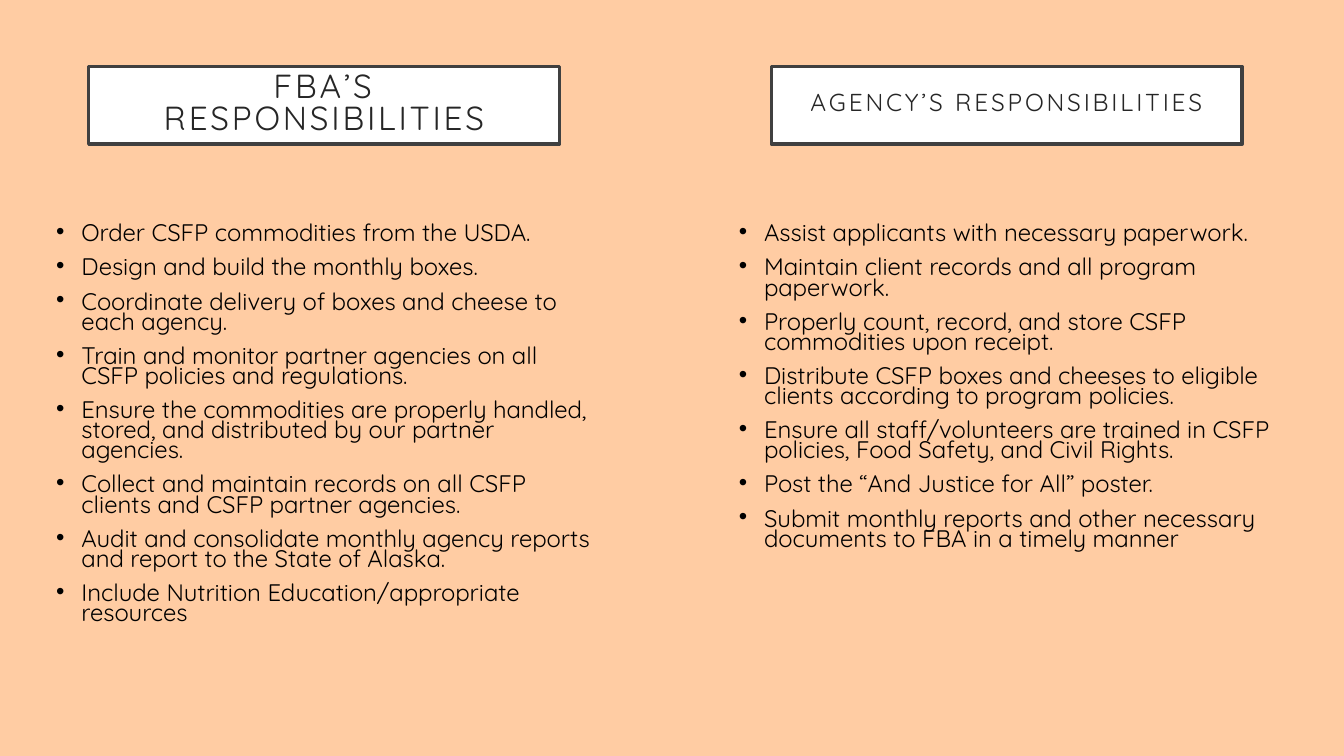
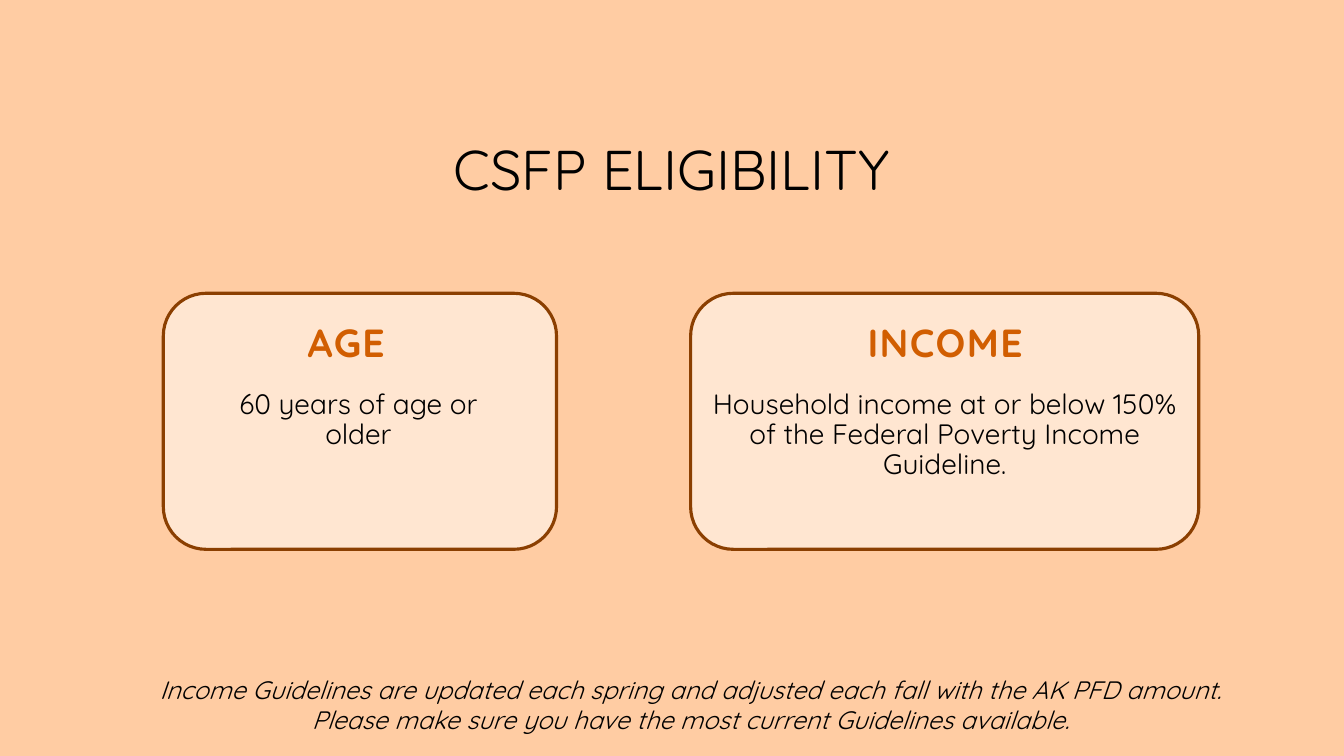
from lxml.etree import SubElement
from pptx import Presentation
from pptx.dml.color import RGBColor
from pptx.enum.shapes import MSO_SHAPE
from pptx.enum.text import MSO_ANCHOR, PP_ALIGN
from pptx.oxml.ns import qn
from pptx.util import Inches, Pt

FONT = "Quicksand"
PEACH, CREAM, WHITE = "FFCCA3", "FFE6D1", "FFFFFF"
BLACK, CHARCOAL, GRAY = "000000", "262626", "404040"
ORANGE, BROWN = "D15E01", "8B3F01"

RESPONSIBILITIES = [
    (0.46, "FBA’S RESPONSIBILITIES", 23.8, 0.8, [
        "Order CSFP commodities from the USDA.",
        "Design and build the monthly boxes.",
        "Coordinate delivery of boxes and cheese to each agency.",
        "Train and monitor partner agencies on all CSFP policies and regulations.",
        "Ensure the commodities are properly handled, stored, and distributed by our partner agencies.",
        "Collect and maintain records on all CSFP clients and CSFP partner agencies.",
        "Audit and consolidate monthly agency reports and report to the State of Alaska.",
        "Include Nutrition Education/appropriate resources",
    ]),
    (7.23, "AGENCY’S RESPONSIBILITIES", 17.5, 0.7, [
        "Assist applicants with necessary paperwork.",
        "Maintain client records and all program paperwork.",
        "Properly count, record, and store CSFP commodities upon receipt.",
        "Distribute CSFP boxes and cheeses to eligible clients according to program policies.",
        "Ensure all staff/volunteers are trained in CSFP policies, Food Safety, and Civil Rights.",
        "Post the “And Justice for All” poster.",
        "Submit monthly reports and other necessary documents to FBA in a timely manner",
    ]),
]


def rgb(color):
    return RGBColor.from_string(color)


class Deck:
    """Holds the shared style and the slide being built."""

    def __init__(self):
        self.presentation = Presentation()
        self.presentation.slide_width = Inches(13.33)
        self.presentation.slide_height = Inches(7.5)
        self.slide = None

    def add_slide(self):
        self.slide = self.presentation.slides.add_slide(self.presentation.slide_layouts[6])
        fill = self.slide.background.fill
        fill.solid()
        fill.fore_color.rgb = rgb(PEACH)

    def set_text(self, shape, lines, size, color=BLACK, align=PP_ALIGN.CENTER,
                 anchor=MSO_ANCHOR.TOP, line_spacing=0.9, letter_spacing=0,
                 indent=0, bullet=False, bold=False, italic=False):
        """Fill a shape with one paragraph per line, in the shared font."""
        frame = shape.text_frame
        frame.word_wrap = True
        frame.vertical_anchor = anchor
        frame.text = "\n".join(lines)
        for index, paragraph in enumerate(frame.paragraphs):
            properties = paragraph._p.get_or_add_pPr()
            if indent:
                properties.set("marL", str(Inches(indent)))
            if bullet:
                properties.set("indent", str(-Inches(indent)))
                SubElement(properties, qn("a:buFont"), typeface="Arial")
                SubElement(properties, qn("a:buChar"), char="•")
            paragraph.alignment = align
            paragraph.line_spacing = line_spacing
            paragraph.space_before = Pt(10 if index else 0)
            for run in paragraph.runs:
                font = run.font
                font.name, font.size = FONT, Pt(size)
                font.bold, font.italic = bold, italic
                font.color.rgb = rgb(color)
                if letter_spacing:
                    run._r.get_or_add_rPr().set("spc", str(letter_spacing * 100))

    def text(self, left, top, width, height, lines, size, **style):
        box = self.slide.shapes.add_textbox(
            Inches(left), Inches(top), Inches(width), Inches(height))
        self.set_text(box, lines, size, **style)

    def panel(self, kind, left, top, width, height, fill, line, line_width):
        shape = self.slide.shapes.add_shape(
            kind, Inches(left), Inches(top), Inches(width), Inches(height))
        shape.shadow.inherit = False
        shape.fill.solid()
        shape.fill.fore_color.rgb = rgb(fill)
        shape.line.color.rgb = rgb(line)
        shape.line.width = Pt(line_width)
        return shape

    def label(self, left, text, size, line_spacing):
        """Add a framed column heading."""
        shape = self.panel(MSO_SHAPE.RECTANGLE, left, 0.66, 4.67, 0.77, WHITE, GRAY, 2.5)
        frame = shape.text_frame
        frame.margin_left = frame.margin_right = Inches(0.2)
        frame.margin_top = frame.margin_bottom = Inches(0.2)
        self.set_text(shape, [text], size, color=CHARCOAL, anchor=MSO_ANCHOR.MIDDLE,
                      line_spacing=line_spacing, letter_spacing=2)

    def bullets(self, left, lines):
        self.text(left, 2.19, 5.5, 5, lines, 17.1, align=PP_ALIGN.LEFT,
                  line_spacing=0.7, indent=0.25, bullet=True)

    def card(self, left, width):
        self.panel(MSO_SHAPE.ROUNDED_RECTANGLE, left, 2.91, width, 2.54, CREAM, BROWN, 2.25)

    def card_heading(self, left, text):
        self.text(left, 2.91, 4.67, 0.77, [text], 28, color=ORANGE,
                  anchor=MSO_ANCHOR.BOTTOM, letter_spacing=1, bold=True)

    def card_body(self, left, width, text, indent=0):
        self.text(left, 3.82, width, 1.31, [text], 20, indent=indent)


def build_responsibilities(deck):
    deck.add_slide()
    for left, heading, size, line_spacing, duties in RESPONSIBILITIES:
        deck.label(left + 0.42, heading, size, line_spacing)
        deck.bullets(left, duties)


def build_eligibility(deck):
    deck.add_slide()
    deck.text(2.44, 1.06, 8.45, 1.3, ["CSFP ELIGIBILITY"], 40, anchor=MSO_ANCHOR.MIDDLE)
    deck.card(1.62, 3.9)
    deck.card_heading(1.1, "AGE")
    deck.card_body(1.73, 3.4, "60 years of age or older", indent=0.25)
    deck.card(6.85, 5.04)
    deck.card_heading(7.04, "INCOME")
    deck.card_body(6.85, 5.04, "Household income at or below 150% of the Federal "
                               "Poverty Income Guideline.")
    deck.text(1.41, 6.64, 10.88, 0.71,
              ["Income Guidelines are updated each spring and adjusted each fall with the "
               "AK PFD amount. Please make sure you have the most current Guidelines available."],
              18, line_spacing=1.0, italic=True)


def main():
    deck = Deck()
    build_responsibilities(deck)
    build_eligibility(deck)
    deck.presentation.save("out.pptx")


if __name__ == "__main__":
    main()
